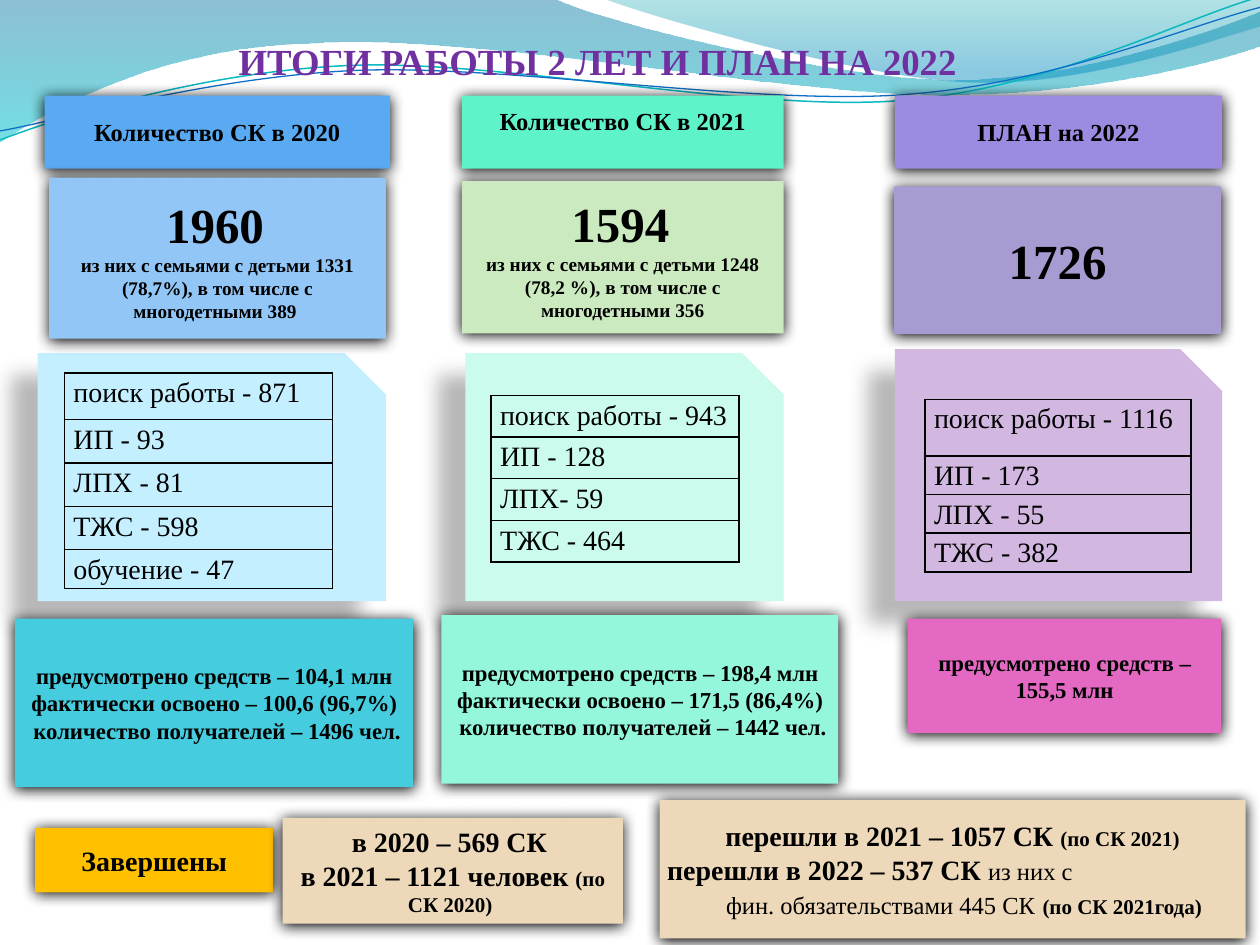
import math
from dataclasses import dataclass
from typing import NamedTuple

from lxml import etree
from pptx import Presentation
from pptx import util as u
from pptx.dml.color import RGBColor
from pptx.enum import shapes, text
from pptx.oxml import parse_xml
from pptx.oxml.ns import nsdecls, qn


@dataclass(frozen=True)
class Theme:
    font: str = "Times New Roman"
    ink: str = "000000"
    title: str = "7030A0"
    done: str = "FFC000"
    sand: str = "EDD8B9"
    title_size: int = 21
    head_size: int = 14
    total_size: int = 28
    note_size: int = 11
    row_size: int = 16
    funds_size: int = 13
    small_size: int = 12


class Area(NamedTuple):
    left: float
    top: float
    width: float
    height: float


class Shadow(NamedTuple):
    alpha: int
    blur: float
    distance: float
    angle: int


class Span(NamedTuple):
    words: str
    size: int
    bold: bool = True


class Line(NamedTuple):
    spans: list[Span]
    align: text.PP_ALIGN = text.PP_ALIGN.CENTER
    indent: float = 0


class Block(NamedTuple):
    area: Area
    fill: str
    lines: list[Line]
    bottom: float = 0.08


class Column(NamedTuple):
    head: Block
    total: Block
    card: Block
    grid: Area
    heights: list[float]
    rows: list[str]
    funds: Block


class Stop(NamedTuple):
    position: int
    color: str
    alpha: int


THEME = Theme()
SOFT = Shadow(100, 8.5, 1, 90)
DEEP = Shadow(28, 11.8, 19.7, 141)
TILT = -2.7


def lines(size: int, *words: str) -> list[Line]:
    return [Line([Span(item, size)]) for item in words]


def total_lines(total: str, note: str) -> list[Line]:
    return [Line([Span(total, THEME.total_size), Span(" ", THEME.note_size)])] + lines(THEME.note_size, note)


def add_span(para, words: str, *, size: int, bold: bool = True, color: str = THEME.ink):
    span = para.add_run()
    span.text = words
    span.font.name = THEME.font
    span.font.size = u.Pt(size)
    span.font.bold = bold
    span.font.color.rgb = RGBColor.from_string(color)


def place(area: Area) -> list[u.Length]:
    return [u.Cm(value) for value in area]


def set_insets(frame, sides: float, top: float, bottom: float):
    frame.margin_left = frame.margin_right = u.Cm(sides)
    frame.margin_top, frame.margin_bottom = u.Cm(top), u.Cm(bottom)


def add_block(page, block: Block, kind=shapes.MSO_SHAPE.RECTANGLE, shadow: Shadow = SOFT):
    box = page.shapes.add_shape(kind, *place(block.area))
    box.fill.solid()
    box.fill.fore_color.rgb = RGBColor.from_string(block.fill)
    box.line.fill.background()
    box.shadow.inherit = False
    effects = box._element.spPr.find(qn("a:effectLst"))
    effects.append(parse_xml(
        f'<a:outerShdw {nsdecls("a")} blurRad="{u.Pt(shadow.blur)}" dist="{u.Pt(shadow.distance)}" '
        f'dir="{shadow.angle * 60000}" algn="ctr" rotWithShape="0"><a:srgbClr val="{THEME.ink}">'
        f'<a:alpha val="{shadow.alpha * 1000}"/></a:srgbClr></a:outerShdw>'))
    frame = box.text_frame
    frame.word_wrap = True
    frame.vertical_anchor = text.MSO_ANCHOR.MIDDLE
    set_insets(frame, 0.15, 0.08, block.bottom)
    for index, line in enumerate(block.lines):
        para = frame.add_paragraph() if index else frame.paragraphs[0]
        para.alignment = line.align
        if line.indent:
            para._p.get_or_add_pPr().set("marL", str(u.Cm(line.indent)))
        for span in line.spans:
            add_span(para, span.words, size=span.size, bold=span.bold)


def add_grid(page, area: Area, heights: list[float], rows: list[str]):
    table = page.shapes.add_table(len(rows), 1, *place(area)).table
    table.first_row = table.horz_banding = False
    for row, height, words in zip(table.rows, heights, rows):
        row.height = u.Cm(height)
        cell = row.cells[0]
        set_insets(cell, 0.18, 0, 0)
        for side in "LRTB":
            border = etree.SubElement(cell._tc.get_or_add_tcPr(), qn(f"a:ln{side}"), w=str(u.Pt(1)))
            paint = etree.SubElement(border, qn("a:solidFill"))
            etree.SubElement(paint, qn("a:srgbClr"), val=THEME.ink)
        cell.fill.background()
        para = cell.text_frame.paragraphs[0]
        para.line_spacing = 1.15
        add_span(para, words, size=THEME.row_size, bold=False)


def turn(point: tuple, center: tuple, degrees: float) -> tuple:
    angle = math.radians(degrees)
    x, y = point[0] - center[0], point[1] - center[1]
    return (center[0] + x * math.cos(angle) - y * math.sin(angle),
            center[1] + x * math.sin(angle) + y * math.cos(angle))


def add_outline(page, moves: list[list[tuple]], closed: bool):
    (first, *rest) = [(u.Cm(x), u.Cm(y)) for move in moves for x, y in move]
    builder = page.shapes.build_freeform(*first)
    builder.add_line_segments(rest, close=closed)
    outline = builder.convert_to_shape()
    segments = iter(list(outline._element.iter(qn("a:lnTo"))))
    for move in moves[1:]:
        group = [next(segments) for _ in move]
        if len(group) == 3:
            curve = etree.Element(qn("a:cubicBezTo"))
            group[0].addprevious(curve)
            for segment in group:
                curve.append(segment[0])
                segment.getparent().remove(segment)
    outline.shadow.inherit = False
    outline.fill.background()
    return outline


def add_wave(page, moves: list[list[tuple]], stops: list[Stop]):
    wave = add_outline(page, moves, True)
    wave.line.fill.background()
    marks = "".join(
        f'<a:gs pos="{stop.position * 1000}"><a:srgbClr val="{stop.color}">'
        f'<a:alpha val="{stop.alpha * 1000}"/></a:srgbClr></a:gs>' for stop in stops)
    properties = wave._element.spPr
    properties.replace(properties.find(qn("a:noFill")), parse_xml(
        f'<a:gradFill {nsdecls("a")}><a:gsLst>{marks}</a:gsLst><a:lin ang="5400000" scaled="0"/></a:gradFill>'))


def add_curve(page, moves: list[list[tuple]], center: tuple, color: str, width: float):
    level = [[turn(point, center, -TILT) for point in move] for move in moves]
    curve = add_outline(page, level, False)
    curve.rotation = TILT
    curve.line.color.rgb = RGBColor.from_string(color)
    curve.line.width = u.Pt(width)


def add_title(page, area: Area, words: str):
    box = page.shapes.add_textbox(*place(area))
    box.text_frame.word_wrap = True
    set_insets(box.text_frame, 0.2, 0.1, 0.1)
    para = box.text_frame.paragraphs[0]
    para.alignment = text.PP_ALIGN.CENTER
    add_span(para, words, size=THEME.title_size, color=THEME.title)


COLUMNS = [
    Column(Block(Area(0.9, 1.93, 6.96, 1.47), "59AAF2", lines(THEME.head_size, "Количество СК в 2020")),
           Block(Area(0.99, 3.58, 6.79, 3.25), "91C6F7", total_lines(
               "1960", "из них с семьями с детьми 1331 (78,7%), в том числе с многодетными 389 ")),
           Block(Area(0.76, 7.12, 7.02, 5), "C4EFFF", []),
           Area(1.3, 7.52, 5.4, 4.33), [0.94, 0.87, 0.88, 0.87, 0.78],
           ["поиск работы - 871", "ИП - 93", "ЛПХ - 81", "ТЖС - 598", "обучение - 47"],
           Block(Area(0.3, 12.47, 8.03, 3.4), "45CDDF", lines(
               THEME.funds_size, "предусмотрено средств – 104,1 млн",
               "фактически освоено – 100,6 (96,7%)", " количество получателей – 1496 чел."))),
    Column(Block(Area(9.31, 1.93, 6.49, 1.47), "5FF3CA", lines(THEME.head_size, "Количество СК в 2021"), 0.53),
           Block(Area(9.31, 3.65, 6.49, 3.07), "CBEAC0", total_lines(
               "1594", "из них с семьями с детьми 1248 (78,2 %), в том числе с многодетными 356")),
           Block(Area(9.38, 7.12, 6.42, 5), "CAFBED", []),
           Area(9.9, 7.97, 5, 3.36), [0.84] * 4,
           ["поиск работы - 943", "ИП - 128", "ЛПХ- 59", "ТЖС - 464"],
           Block(Area(8.9, 12.4, 8, 3.4), "94F7DC", lines(
               THEME.funds_size, "предусмотрено средств – 198,4 млн",
               "фактически освоено – 171,5 (86,4%)", " количество получателей – 1442 чел."))),
    Column(Block(Area(18.04, 1.93, 6.6, 1.47), "9D8BE1", lines(THEME.head_size, "ПЛАН на 2022")),
           Block(Area(18.02, 3.76, 6.6, 2.97), "A79BD1", lines(THEME.total_size, "1726")),
           Block(Area(18.04, 7.04, 6.6, 5.08), "D2B7E1", []),
           Area(18.65, 8.05, 5.36, 3.48), [1.14, 0.78, 0.78, 0.78],
           ["поиск работы - 1116", "ИП - 173", "ЛПХ - 55", "ТЖС - 382"],
           Block(Area(18.3, 12.47, 6.32, 2.31), "E369C3", lines(
               THEME.funds_size, "предусмотрено средств – 155,5 млн"))),
]

RESULTS = [
    Block(Area(0.71, 16.69, 4.8, 1.3), THEME.done, lines(THEME.row_size, "Завершены")),
    Block(Area(5.7, 16.49, 6.86, 2.13), THEME.sand, [
        Line([Span("в 2020 – 569 СК ", THEME.row_size)]),
        Line([Span("в 2021 – 1121 человек ", THEME.row_size), Span("(по СК 2020) ", THEME.small_size)])]),
    Block(Area(13.3, 16.13, 11.81, 2.79), THEME.sand, [
        Line([Span("перешли в 2021 – 1057 СК ", THEME.row_size), Span("(по СК 2021)", THEME.small_size)]),
        Line([Span("перешли в 2022 – 537 СК ", THEME.row_size), Span("из них с", THEME.head_size, False)],
             text.PP_ALIGN.LEFT),
        Line([Span("фин. обязательствами 445 СК", THEME.head_size, False), Span(" ", THEME.row_size),
              Span("(по СК 2021года)", THEME.small_size), Span(" ", THEME.row_size)], indent=0.6)]),
]


def main():
    deck = Presentation()
    deck.slide_width, deck.slide_height = u.Cm(25.4), u.Cm(19.05)
    page = deck.slides.add_slide(deck.slide_layouts[6])
    add_wave(page, [
        [(0, 0)], [(11.18, -0.03)], [(12.09, 0.43), (16.87, 1.6), (19.25, 1.6)],
        [(21.67, 1.6), (24.33, 0.66), (25.4, 0.23)], [(25.43, 0.91)],
        [(24.97, 1.12), (22.1, 1.93), (18.95, 1.91)], [(15.8, 1.91), (9.7, 0.71), (6.53, 0.86)],
        [(3.28, 0.91), (1.17, 2.11), (-0.03, 2.87)], [(0, 0)]], [Stop(0, "0074A1", 45), Stop(100, "00C6CF", 55)])
    add_wave(page, [
        [(12.17, -0.03)], [(12.93, 0.28), (17.32, 1.57), (19.53, 1.65)],
        [(21.74, 1.75), (24.41, 0.81), (25.4, 0.53)], [(25.4, 0)], [(12.17, -0.03)]],
        [Stop(0, "00A1A9", 30), Stop(80, "008BBF", 45)])
    add_curve(page, [
        [(0, 2.82)], [(1.22, 2.36), (4.01, 1.45), (7.04, 1.32)], [(10.03, 1.19), (15.06, 2.26), (18.11, 2.03)],
        [(21.16, 1.8), (23.83, 0.38), (25.35, -0.05)]], (12.67, 1.46), "0AB8BF", 0.85)
    add_curve(page, [
        [(0, 2.64)], [(1.19, 2.44), (4.17, 1.55), (7.19, 1.42)], [(10.24, 1.3), (15.16, 2.13), (18.21, 1.91)],
        [(21.23, 1.7), (23.9, 0.53), (25.4, 0.15)]], (12.69, 1.5), "0F6FC6", 0.75)
    add_title(page, Area(0.71, 0.69, 22.68, 1.12), "ИТОГИ РАБОТЫ 2 ЛЕТ И ПЛАН НА 2022")
    for column in COLUMNS:
        add_block(page, column.head)
        add_block(page, column.card, shapes.MSO_SHAPE.SNIP_1_RECTANGLE, DEEP)
        add_block(page, column.total)
        add_grid(page, column.grid, column.heights, column.rows)
        add_block(page, column.funds)
    for block in RESULTS:
        add_block(page, block)
    deck.save("out.pptx")


if __name__ == "__main__":
    main()
